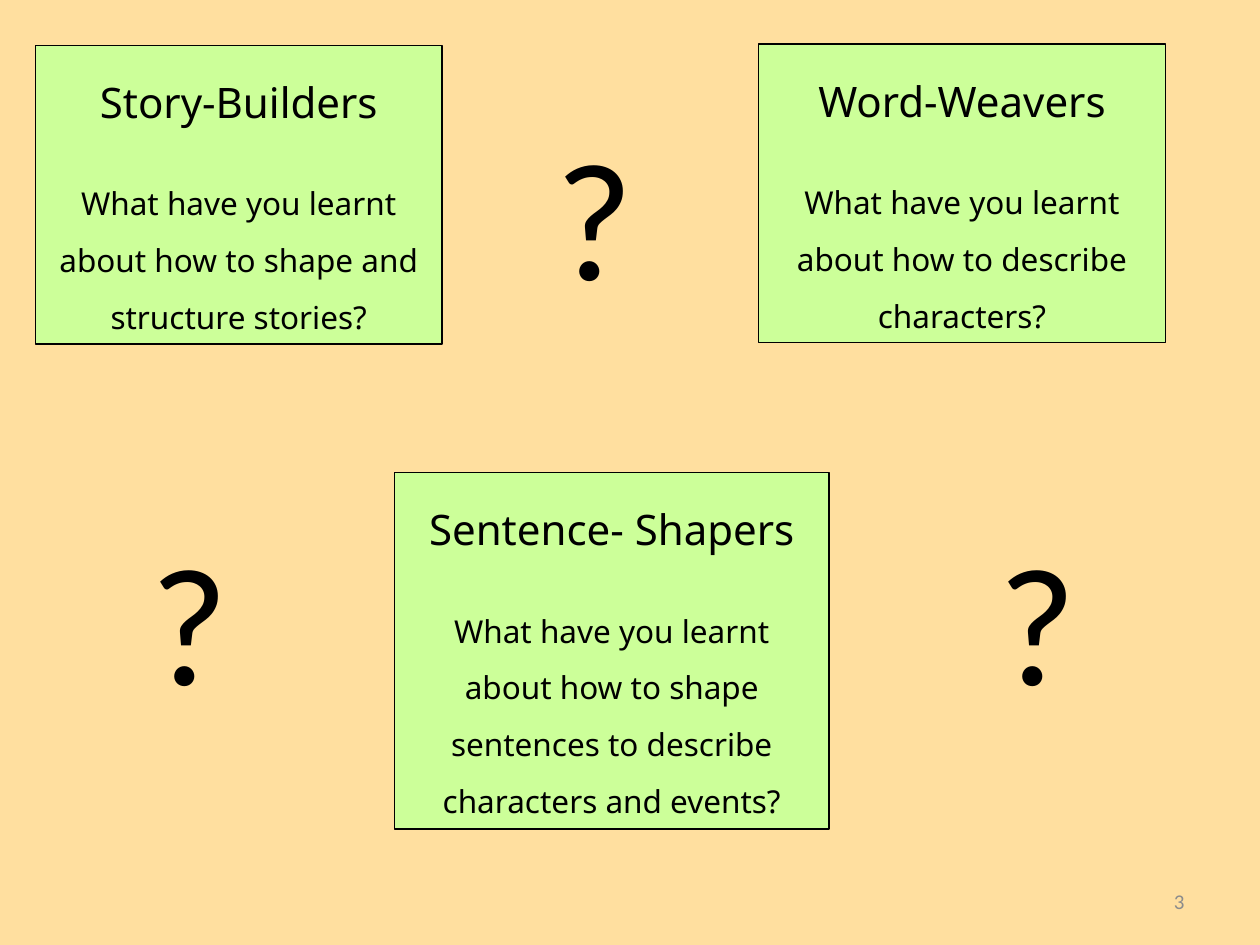
from pptx import Presentation
from pptx.dml.color import RGBColor
from pptx.enum.shapes import MSO_SHAPE as Shape
from pptx.enum.text import MSO_ANCHOR as Anchor, MSO_AUTO_SIZE as AutoSize, PP_ALIGN as Align
from pptx.util import Inches, Pt

deck = Presentation()
deck.slide_width, deck.slide_height = Inches(10), Inches(7.5)
column, row = deck.slide_width / 100, deck.slide_height / 75
page = deck.slides.add_slide(deck.slide_layouts[6])


def paint(fill, color):
    fill.solid()
    fill.fore_color.rgb = RGBColor.from_string(color)


def write(para, text, size, font, color="000000", align=Align.CENTER):
    para.alignment = align
    span = para.add_run()
    span.text = text
    span.font.size = Pt(size)
    span.font.name = font
    paint(span.font.fill, color)


paint(page.background.fill, "FFDF9F")

cards = [
    (2.8, 3.6, 32.3, 23.7, "Story-Builders",
     "What have you learnt about how to shape and structure stories?"),
    (60.2, 3.5, 32.3, 23.7, "Word-Weavers",
     "What have you learnt about how to describe characters?"),
    (31.3, 37.5, 34.5, 28.3, "Sentence- Shapers",
     "What have you learnt about how to shape sentences to describe characters and events?"),
]
for left, top, width, height, title, question in cards:
    card = page.shapes.add_shape(Shape.RECTANGLE, int(left * column), int(top * row),
                                 int(width * column), int(height * row))
    card.shadow.inherit = False
    paint(card.fill, "CCFF99")
    paint(card.line.fill, "000000")
    card.line.width = Pt(0.75)
    frame = card.text_frame
    frame.word_wrap = True
    frame.auto_size = AutoSize.SHAPE_TO_FIT_TEXT
    frame.vertical_anchor = Anchor.TOP
    heading, body = frame.paragraphs[0], frame.add_paragraph()
    heading.line_spacing = body.line_spacing = 1.5
    body.space_before = Pt(22)
    write(heading, title, 24, "Noto Sans")
    write(body, question, 18, "Noto Sans")

for left, top in [(41.3, 8.4), (76.4, 40.6), (9.1, 40.6)]:
    mark = page.shapes.add_textbox(int(left * column), int(top * row),
                                   int(11.8 * column), int(17.2 * row))
    mark.text_frame.word_wrap = True
    mark.text_frame.auto_size = AutoSize.SHAPE_TO_FIT_TEXT
    write(mark.text_frame.paragraphs[0], "?", 96, "Calibri")

number = page.shapes.add_textbox(int(71.7 * column), int(69.5 * row),
                                 int(23.3 * column), int(4 * row))
number.text_frame.word_wrap = True
number.text_frame.vertical_anchor = Anchor.MIDDLE
write(number.text_frame.paragraphs[0], "3", 12, "Calibri", "8C8C8C", Align.RIGHT)

deck.save("out.pptx")
